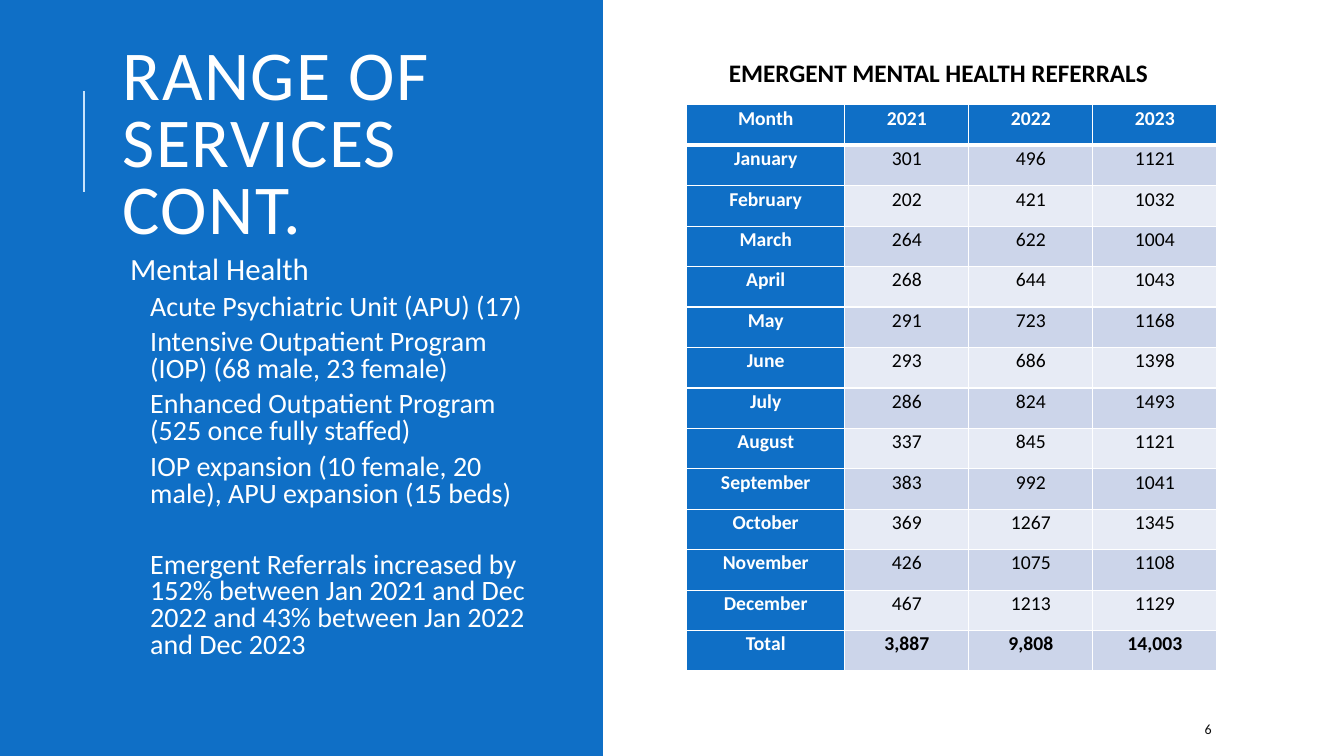
from lxml import etree
from pptx import Presentation
from pptx.dml.color import RGBColor
from pptx.enum import shapes, text
from pptx.oxml.ns import qn
from pptx.util import Inches, Pt

BLUE = RGBColor(0x0F, 0x6F, 0xC6)
PALE_BLUE = RGBColor(0xC8, 0xE3, 0xFB)
BAND_DARK = RGBColor(0xCC, 0xD5, 0xEA)
BAND_LIGHT = RGBColor(0xE7, 0xEB, 0xF5)
WHITE = RGBColor(0xFF, 0xFF, 0xFF)
BLACK = RGBColor(0, 0, 0)
NEAR_BLACK = RGBColor(0x0D, 0x0D, 0x0D)


def style(p, size, color, bold=False):
    p.font.name = "Calibri"
    p.font.size = Pt(size)
    p.font.color.rgb = color
    p.font.bold = bold


def add_text(left, top, width, height, lines, size, color, bold=False,
             anchor=text.MSO_ANCHOR.TOP):
    box = slide.shapes.add_textbox(Inches(left), Inches(top), Inches(width), Inches(height))
    tf = box.text_frame
    tf.word_wrap = True
    tf.vertical_anchor = anchor
    tf.text = "\n".join(lines)
    for p in tf.paragraphs:
        style(p, size, color, bold)
    return tf


prs = Presentation()
prs.slide_width = Inches(13.33)
prs.slide_height = Inches(7.5)
slide = prs.slides.add_slide(prs.slide_layouts[6])

# Left panel
panel = slide.shapes.add_shape(shapes.MSO_SHAPE.RECTANGLE, 0, 0, Inches(5.98), prs.slide_height)
panel.shadow.inherit = False
panel.fill.solid()
panel.fill.fore_color.rgb = BLUE
panel.line.fill.background()

# Title with its accent line
tf = add_text(1.12, 0.64, 4.13, 1.64, ["RANGE OF SERVICES CONT."], 50, WHITE,
              anchor=text.MSO_ANCHOR.MIDDLE)
p = tf.paragraphs[0]
p.line_spacing = 0.8
p.runs[0].font._element.set("spc", "100")

accent = slide.shapes.add_connector(shapes.MSO_CONNECTOR.STRAIGHT, Inches(0.83), Inches(1.9),
                                    Inches(0.83), Inches(0.9))
accent.line.color.rgb = PALE_BLUE
accent.line.width = Pt(1.5)
etree.SubElement(accent._element.spPr, qn("a:effectLst"))

# Services list
services = [
    "Mental Health",
    "Acute Psychiatric Unit (APU) (17)",
    "Intensive Outpatient Program (IOP) (68 male, 23 female)",
    "Enhanced Outpatient Program (525 once fully staffed)",
    "IOP expansion (10 female, 20 male), APU expansion (15 beds)",
    "Emergent Referrals increased by 152% between Jan 2021 and Dec 2022 "
    "and 43% between Jan 2022 and Dec 2023",
]
tf = add_text(1.12, 2.5, 4.15, 4.3, services, 20, WHITE)
tf.margin_left = tf.margin_right = tf.margin_top = tf.margin_bottom = Inches(0.05)
for p in tf.paragraphs:
    p.line_spacing = 0.8
    p.space_before = Pt(2)
    p.space_after = Pt(4)
    p._p.get_or_add_pPr().set("marL", str(Inches(0.32)))
heading, closing = tf.paragraphs[0], tf.paragraphs[-1]
heading.font.size = Pt(22)
heading.space_before = Pt(12)
heading._p.get_or_add_pPr().set("marL", str(Inches(0.12)))
closing.space_before = Pt(27.5)

# Slide number
add_text(11.85, 7.08, 1.06, 0.3, ["6"], 10, NEAR_BLACK, anchor=text.MSO_ANCHOR.MIDDLE)

# Referrals table
referrals = [
    ("Month", "2021", "2022", "2023"),
    ("January", "301", "496", "1121"),
    ("February", "202", "421", "1032"),
    ("March", "264", "622", "1004"),
    ("April", "268", "644", "1043"),
    ("May", "291", "723", "1168"),
    ("June", "293", "686", "1398"),
    ("July", "286", "824", "1493"),
    ("August", "337", "845", "1121"),
    ("September", "383", "992", "1041"),
    ("October", "369", "1267", "1345"),
    ("November", "426", "1075", "1108"),
    ("December", "467", "1213", "1129"),
    ("Total", "3,887", "9,808", "14,003"),
]
last = len(referrals) - 1
table = slide.shapes.add_table(len(referrals), 4, Inches(6.81), Inches(1.04),
                               Inches(5.26), Inches(5.62)).table
for col, width in zip(table.columns, (1.57, 1.23, 1.23, 1.23)):
    col.width = Inches(width)

for i, row in enumerate(referrals):
    for j, value in enumerate(row):
        cell = table.cell(i, j)
        is_label = i == 0 or j == 0
        cell.margin_left = cell.margin_right = Inches(0.07)
        cell.margin_top = cell.margin_bottom = 0
        cell.text = value
        p = cell.text_frame.paragraphs[0]
        p.alignment = text.PP_ALIGN.CENTER
        p.line_spacing = 1.07
        style(p, 14, WHITE if is_label else BLACK, is_label or i == last)

        # White borders, thicker under the header row
        thick = {(0, "lnB"), (1, "lnT")}
        for side in ("lnL", "lnR", "lnT", "lnB"):
            width = Pt(3 if (i, side) in thick else 1)
            ln = etree.SubElement(cell._tc.get_or_add_tcPr(), qn("a:" + side), w=str(width))
            fill = etree.SubElement(ln, qn("a:solidFill"))
            etree.SubElement(fill, qn("a:srgbClr"), val=str(WHITE))

        cell.fill.solid()
        cell.fill.fore_color.rgb = BLUE if is_label else BAND_DARK if i % 2 else BAND_LIGHT

# Table heading
add_text(7.13, 0.52, 4.73, 0.4, ["EMERGENT MENTAL HEALTH REFERRALS"], 18, BLACK, True)

prs.save("out.pptx")
